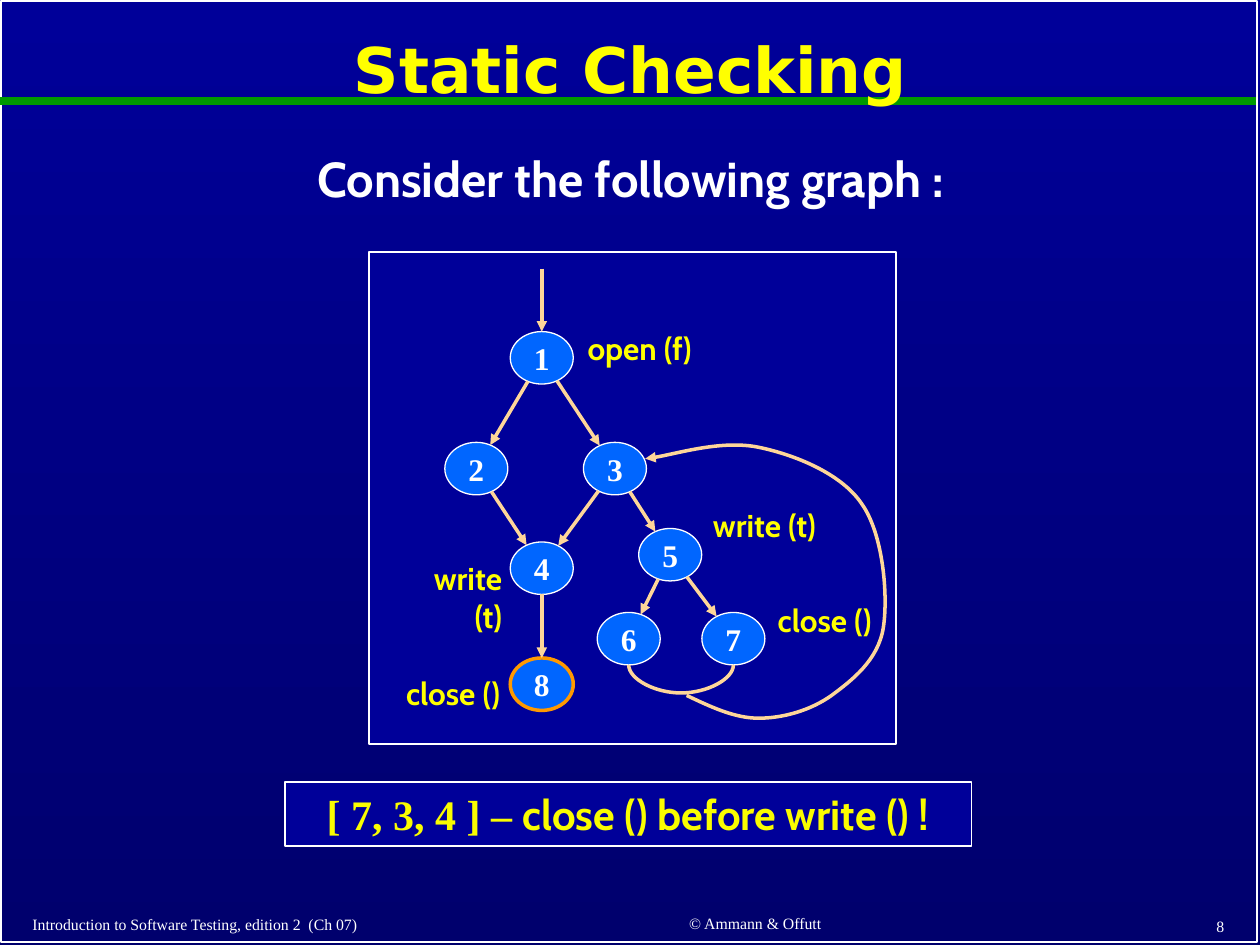
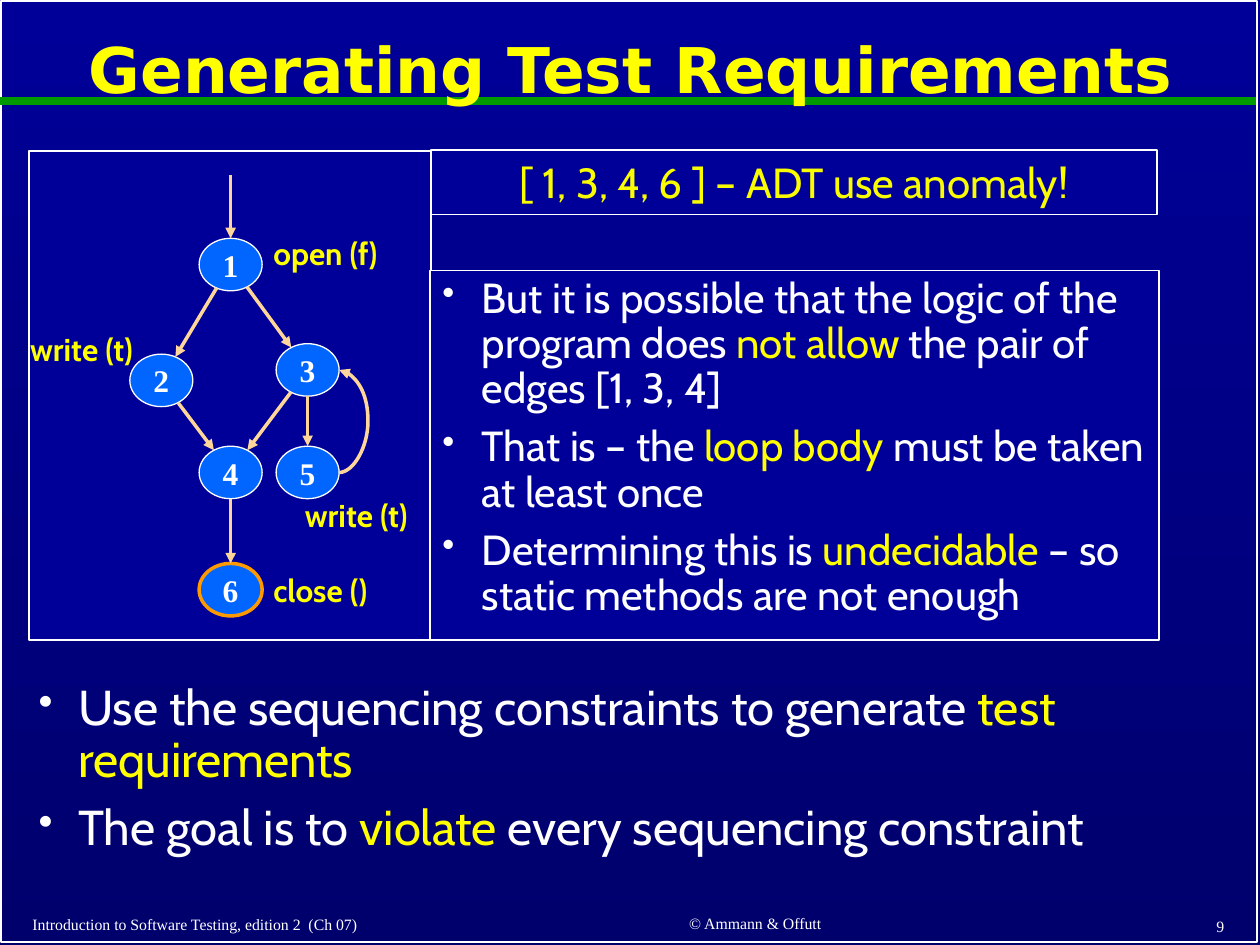
from dataclasses import dataclass
from math import hypot

from lxml import etree
from pptx import Presentation
from pptx.dml.color import RGBColor
from pptx.enum.shapes import MSO_CONNECTOR, MSO_SHAPE
from pptx.enum.text import MSO_ANCHOR, PP_ALIGN
from pptx.oxml.ns import qn
from pptx.util import Pt

STRAIGHT = MSO_CONNECTOR.STRAIGHT
RECTANGLE, OVAL = MSO_SHAPE.RECTANGLE, MSO_SHAPE.OVAL
TOP, MIDDLE = MSO_ANCHOR.TOP, MSO_ANCHOR.MIDDLE
LEFT, CENTER, RIGHT = PP_ALIGN.LEFT, PP_ALIGN.CENTER, PP_ALIGN.RIGHT

WHITE = RGBColor(0xFF, 0xFF, 0xFF)
YELLOW = RGBColor(0xFF, 0xFF, 0x00)
CALLOUT_YELLOW = RGBColor(0xFA, 0xFD, 0x00)
NAVY = RGBColor(0x00, 0x00, 0x99)
DARK_NAVY = RGBColor(0x00, 0x00, 0x6D)
GREEN = RGBColor(0x00, 0x99, 0x00)
NODE_BLUE = RGBColor(0x00, 0x66, 0xFF)
FINAL_ORANGE = RGBColor(0xFF, 0x99, 0x00)
EDGE_PEACH = RGBColor(0xFE, 0xD6, 0x99)

TITLE_FONT, BODY_FONT, SERIF = "DejaVu Sans", "Cabin", "Times New Roman"
NODE_WIDTH, NODE_HEIGHT = 36, 30
LABEL_HEIGHT = 29
ENTRY_LENGTH = 36
BULLET_INDENT = 22.5


@dataclass
class Style:
    font: str = BODY_FONT
    size: float = 18
    color: RGBColor = WHITE
    bold: bool = False
    align: PP_ALIGN = LEFT
    anchor: MSO_ANCHOR = TOP
    spacing: float = 1.0
    bullet: bool = False


TITLE = Style(TITLE_FONT, 36, YELLOW, True, CENTER, MIDDLE, 0.9)
HEADING = Style(size=28, bold=True, align=CENTER, spacing=0.9)
NODE = Style(SERIF, bold=True, align=CENTER, anchor=MIDDLE)


def footer_style(align):
    return Style(SERIF, 9, align=align, anchor=MIDDLE)


def label_style(align):
    return Style(color=YELLOW, bold=True, align=align)


def callout_style(bold):
    return Style(size=24, color=CALLOUT_YELLOW, bold=bold, align=CENTER)


def bullet_style(size):
    return Style(size=size, spacing=0.9, bullet=True)


def add_bullet(para):
    props = para._p.get_or_add_pPr()
    props.set("marL", str(Pt(BULLET_INDENT)))
    props.set("indent", str(-Pt(BULLET_INDENT)))
    etree.SubElement(props, qn("a:buSzPct")).set("val", "85000")
    etree.SubElement(props, qn("a:buChar")).set("char", "•")


def write(shape, paragraphs, style):
    """Fill a shape with paragraphs, each a list of spans; every second span is yellow."""
    frame = shape.text_frame
    frame.word_wrap = True
    frame.vertical_anchor = style.anchor
    for number, spans in enumerate(paragraphs):
        para = frame.add_paragraph() if number else frame.paragraphs[0]
        para.alignment = style.align
        para.line_spacing = style.spacing
        if style.bullet:
            para.space_before = Pt(0.3 * style.size)
            add_bullet(para)
        para.font.name = style.font
        para.font.size = Pt(style.size)
        para.font.bold = style.bold
        para.font.color.rgb = style.color
        for position, text in enumerate(spans):
            span = para.add_run()
            span.text = text
            if position % 2:
                span.font.color.rgb = YELLOW
    return shape


def add_text(page, box, paragraphs, style):
    return write(page.shapes.add_textbox(*map(Pt, box)), paragraphs, style)


def set_line(shape, color, width, arrow=False):
    shape.line.color.rgb = color
    shape.line.width = Pt(width)
    if arrow:
        line = shape.line._get_or_add_ln()
        etree.SubElement(line, qn("a:tailEnd")).set("type", "triangle")


def add_outline(page, kind, box, fill, color=WHITE, width=1.0):
    shape = page.shapes.add_shape(kind, *map(Pt, box))
    shape.shadow.inherit = False
    if fill is None:
        shape.fill.background()
    else:
        shape.fill.solid()
        shape.fill.fore_color.rgb = fill
    set_line(shape, color, width)
    return shape


def add_line(page, start, end, color, width, arrow=False):
    line = page.shapes.add_connector(STRAIGHT, *map(Pt, (*start, *end)))
    set_line(line, color, width, arrow)
    etree.SubElement(line._element.spPr, qn("a:effectLst"))


def add_curve(page, origin, points, arrow=False):
    """Draw cubic curves through a start point and triples of control, control, end."""
    places = [(Pt(origin[0] + x), Pt(origin[1] + y)) for x, y in points]
    builder = page.shapes.build_freeform(*places[0])
    builder.add_line_segments(places[1:], close=False)
    curve = builder.convert_to_shape()
    segments = list(curve._element.iter(qn("a:lnTo")))
    for first in range(0, len(segments), 3):
        triple = segments[first:first + 3]
        cubic = etree.Element(qn("a:cubicBezTo"))
        triple[0].addprevious(cubic)
        for segment in triple:
            cubic.append(segment[0])
            segment.getparent().remove(segment)
    curve.shadow.inherit = False
    curve.fill.background()
    set_line(curve, EDGE_PEACH, 2, arrow)


def bulge(start, end, depth):
    """Return the points of an arc that swells by depth to the right of its course."""
    run, rise = end[0] - start[0], end[1] - start[1]
    length = hypot(run, rise)

    def place(along, out):
        shift = out * depth / length
        return start[0] + along * run - shift * rise, start[1] + along * rise + shift * run

    steps = [(0, 0), (0, 0.5), (0.25, 1), (0.5, 1), (0.75, 1), (1, 0.5), (1, 0)]
    return [place(*step) for step in steps]


def add_edge(page, source, target):
    """Join two nodes from rim to rim along the line between their centres."""
    run, rise = target[0] - source[0], target[1] - source[1]
    rim = 0.5 / hypot(run / NODE_WIDTH, rise / NODE_HEIGHT)
    start = source[0] + rim * run, source[1] + rim * rise
    end = target[0] - rim * run, target[1] - rim * rise
    add_line(page, start, end, EDGE_PEACH, 2, arrow=True)


def add_graph(page, box, nodes, edges, final, labels, align):
    """Draw a framed flow graph; node centres and labels are relative to the box."""
    left, top = box[:2]
    add_outline(page, RECTANGLE, box, NAVY)
    centres = {name: (left + x, top + y) for name, (x, y) in nodes.items()}
    for name, (x, y) in centres.items():
        color, width = (FINAL_ORANGE, 2) if name == final else (WHITE, 0.75)
        node_box = x - NODE_WIDTH / 2, y - NODE_HEIGHT / 2, NODE_WIDTH, NODE_HEIGHT
        node = add_outline(page, OVAL, node_box, NODE_BLUE, color, width)
        write(node, [[str(name)]], NODE)
        frame = node.text_frame
        frame.margin_left = frame.margin_right = frame.margin_top = frame.margin_bottom = 0
    for source, target in edges:
        add_edge(page, centres[source], centres[target])
    x, y = centres[1]
    rim_top = y - NODE_HEIGHT / 2
    add_line(page, (x, rim_top - ENTRY_LENGTH), (x, rim_top), EDGE_PEACH, 2, arrow=True)
    for text, x, y, width in labels:
        label_box = left + x, top + y, width, LABEL_HEIGHT
        add_text(page, label_box, [[text]], label_style(align))


def add_callout(page, box, spans, bold):
    shape = add_outline(page, RECTANGLE, box, NAVY)
    return write(shape, [spans], callout_style(bold))


def add_page(deck, title, number):
    """Add a slide with the shared background, border, rule, title and footers."""
    page = deck.slides.add_slide(deck.slide_layouts[6])
    fill = page.background.fill
    fill.gradient()
    fill.gradient_angle = 270
    for stop, color, position in zip(fill.gradient_stops, (NAVY, DARK_NAVY), (0, 1)):
        stop.color.rgb = color
        stop.position = position
    add_outline(page, RECTANGLE, (0.7, 0.7, 717.8, 537.8), None)
    add_line(page, (0, 57.5), (718, 57.5), GREEN, 4.5)
    add_text(page, (10.8, 7.9, 699, 67.7), [[title]], TITLE)
    footers = [
        ("Introduction to Software Testing, edition 2  (Ch 07)", (11.5, 520, 294, 16.6), LEFT),
        ("© Ammann & Offutt", (317.5, 519, 228, 16.6), CENTER),
        (str(number), (556.6, 520.5, 150, 17.3), RIGHT),
    ]
    for text, box, align in footers:
        add_text(page, box, [[text]], footer_style(align))
    return page


def build_static_checking(deck):
    page = add_page(deck, "Static Checking", 8)
    add_text(page, (28, 85, 664.6, 37.4), [["Consider the following graph :"]], HEADING)
    box = 211, 144, 301, 281
    nodes = {1: (98.6, 60.5), 2: (61.2, 123.8), 3: (140.4, 123.8), 4: (98.6, 180.7),
             5: (172, 173), 6: (148.3, 221), 7: (208.1, 221), 8: (98.6, 247)}
    edges = [(1, 2), (1, 3), (2, 4), (3, 4), (3, 5), (4, 8), (5, 6), (5, 7)]
    labels = [("open (f)", 107.3, 40.3, 84), ("write (t)", 13, 172, 70),
              ("write (t)", 179.3, 141.8, 83), ("close ()", 210.2, 195.8, 84),
              ("close ()", -2.2, 237.6, 84)]
    add_graph(page, box, nodes, edges, 8, labels, RIGHT)
    branch_ends = [(nodes[name][0], nodes[name][1] + NODE_HEIGHT / 2) for name in (6, 7)]
    add_curve(page, box, bulge(*branch_ends, 16))
    back_to_3 = [
        (181.4, 253.4),
        (195.1, 259.9), (208.8, 266.4), (222.5, 266.4),
        (236.2, 266.4), (252, 262.1), (264.2, 253.4),
        (275.8, 244.8), (290.9, 233.3), (293.8, 214.6),
        (296.6, 196.6), (293.8, 161.3), (281.5, 144),
        (270, 126.7), (243.4, 115.9), (222.5, 111.6),
        (201.6, 107.3), (168.5, 117.4), (157.7, 118.1),
    ]
    add_curve(page, box, back_to_3, arrow=True)
    callout = add_callout(page, (162.7, 447, 392.4, 36.4),
                          ["[ 7, 3, 4 ] – ", "close () before write () !"], True)
    path_span, reason_span = callout.text_frame.paragraphs[0].runs
    path_span.font.name = SERIF
    reason_span.font.color.rgb = CALLOUT_YELLOW


def build_test_requirements(deck):
    page = add_page(deck, "Generating Test Requirements", 9)
    add_text(page, (15, 386.6, 685.4, 111), [
        ["Use the sequencing constraints to generate ", "test requirements"],
        ["The goal is to ", "violate", " every sequencing constraint"],
    ], bullet_style(28))
    box = 16.6, 86.4, 229.7, 279.4
    nodes = {1: (115.2, 64.8), 2: (75.6, 131), 3: (159.2, 125),
             4: (115.2, 183.6), 5: (159.2, 183.6), 6: (115.2, 250.6)}
    edges = [(1, 2), (1, 3), (2, 4), (3, 4), (3, 5), (4, 6)]
    labels = [("open (f)", 132.5, 43.9, 84), ("write (t)", -6.5, 98.6, 84),
              ("write (t)", 150.5, 193.7, 84), ("close ()", 132.5, 236.2, 84)]
    add_graph(page, box, nodes, edges, 6, labels, LEFT)
    loop_ends = [(nodes[name][0] + NODE_WIDTH / 2, nodes[name][1]) for name in (5, 3)]
    add_curve(page, box, bulge(*loop_ends, 16.5), arrow=True)
    add_callout(page, (246.4, 85.7, 414.7, 36.9), ["[ 1, 3, 4, 6 ] – ADT use anomaly!"], False)
    reasons = add_outline(page, RECTANGLE, (245.7, 154.7, 416.6, 211), NAVY, width=0.75)
    write(reasons, [
        ["But it is possible that the logic of the program does ", "not allow ",
         "the pair of edges [1, 3, 4]"],
        ["That is – the ", "loop body", " must be taken at least once"],
        ["Determining this is ", "undecidable", " – so static methods are not enough"],
    ], bullet_style(24))


def main():
    deck = Presentation()
    deck.slide_width, deck.slide_height = Pt(720), Pt(540)
    build_static_checking(deck)
    build_test_requirements(deck)
    deck.save("out.pptx")


if __name__ == "__main__":
    main()
